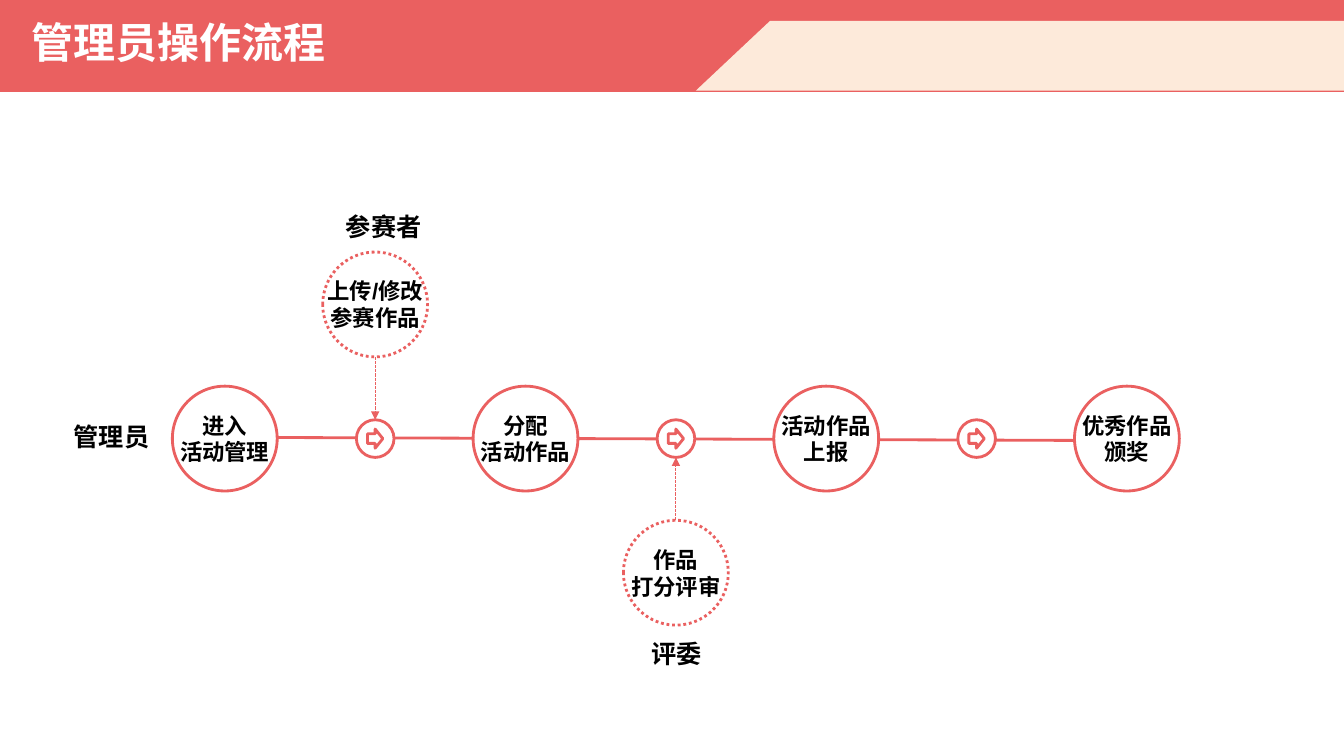
from dataclasses import dataclass

from lxml import etree
from pptx import Presentation
from pptx.dml.color import RGBColor
from pptx.enum import dml, lang, shapes, text
from pptx.oxml import ns
from pptx.util import Pt

CORAL = RGBColor(0xEA, 0x60, 0x60)
CREAM = RGBColor(0xFD, 0xEA, 0xDA)
WHITE = RGBColor(0xFF, 0xFF, 0xFF)
BLACK = RGBColor(0, 0, 0)

SLIDE_WIDTH, SLIDE_HEIGHT = 960, 540
HEADER_HEIGHT = 64.8
FLOW_Y = 313.3
FIRST_X = 160.6
PITCH = 214.8
STEP_SIZE = 74.9
MARKER_SIZE = 26.9
SIDE_OFFSET = 95.8
LABEL_WIDTH, LABEL_HEIGHT = 101.5, 29


@dataclass(frozen=True)
class SideTask:
    """A task of another role, which feeds into the marker after a step."""
    after_step: int
    direction: int  # -1 above the flow, 1 below it
    lines: tuple[str, ...]


@dataclass(frozen=True)
class RoleLabel:
    role: str
    center_x: float
    top: float


STEPS = [
    ("进入", "活动管理"),
    ("分配", "活动作品"),
    ("活动作品", "上报"),
    ("优秀作品", "颁奖"),
]
SIDE_TASKS = [
    SideTask(0, -1, ("上传/修改", "参赛作品")),
    SideTask(1, 1, ("作品", "打分评审")),
]
ROLE_LABELS = [
    RoleLabel("参赛者", 274, 147.6),
    RoleLabel("评委", 483.5, 452.2),
    RoleLabel("管理员", 79.6, 297.4),
]


def write_text(frame, lines, *, size, color=BLACK, font="Arial",
               align=text.PP_ALIGN.CENTER, anchor=text.MSO_ANCHOR.TOP,
               wrap=True, fit=text.MSO_AUTO_SIZE.NONE, spacing=None) -> None:
    frame.word_wrap = wrap
    frame.auto_size = fit
    frame.vertical_anchor = anchor
    for index, line in enumerate(lines):
        paragraph = frame.paragraphs[0] if index == 0 else frame.add_paragraph()
        paragraph.alignment = align
        paragraph.line_spacing = spacing
        run = paragraph.add_run()
        run.text = line
        run.font.size = Pt(size)
        run.font.name = font
        run.font.bold = True
        run.font.color.rgb = color
        run.font.language_id = lang.MSO_LANGUAGE_ID.SIMPLIFIED_CHINESE


def add_centered(slide, preset, x: float, y: float, width: float,
                 height: float, fill: RGBColor = WHITE, dash=None):
    """Add a coral-outlined shape around the point x, y."""
    outline = slide.shapes.add_shape(
        preset, Pt(x - width / 2), Pt(y - height / 2), Pt(width), Pt(height))
    outline.shadow.inherit = False
    outline.fill.solid()
    outline.fill.fore_color.rgb = fill
    outline.line.color.rgb = CORAL
    outline.line.width = Pt(2)
    if dash is not None:
        outline.line.dash_style = dash
    return outline


def add_line(slide, start: tuple[float, float], end: tuple[float, float],
             width: float, dashed_arrow: bool = False) -> None:
    line = slide.shapes.add_connector(
        shapes.MSO_CONNECTOR.STRAIGHT, *map(Pt, start + end))
    line.line.color.rgb = CORAL
    line.line.width = Pt(width)
    if dashed_arrow:
        line.line.dash_style = dml.MSO_LINE.SQUARE_DOT
        etree.SubElement(line.get_or_add_ln(), ns.qn("a:tailEnd"), type="triangle")
    etree.SubElement(line.element.spPr, ns.qn("a:effectLst"))


def add_header(slide) -> None:
    add_centered(slide, shapes.MSO_SHAPE.RECTANGLE, SLIDE_WIDTH / 2,
                 HEADER_HEIGHT / 2, SLIDE_WIDTH, HEADER_HEIGHT, CORAL)

    title = slide.shapes.title
    title.left, title.top = Pt(15.1), Pt(0)
    title.width, title.height = Pt(459.4), Pt(HEADER_HEIGHT)
    write_text(title.text_frame, ["管理员操作流程"], size=30, color=WHITE,
               font="Montserrat", align=text.PP_ALIGN.LEFT,
               anchor=text.MSO_ANCHOR.MIDDLE, spacing=0.9)
    title.element.getparent().append(title.element)  # in front of the band

    outline = slide.shapes.build_freeform(Pt(550), Pt(15), scale=1.0)
    outline.add_line_segments(
        [(Pt(SLIDE_WIDTH), Pt(15)), (Pt(SLIDE_WIDTH), Pt(HEADER_HEIGHT)),
         (Pt(497), Pt(HEADER_HEIGHT))])
    accent = outline.convert_to_shape()
    accent.shadow.inherit = False
    accent.fill.solid()
    accent.fill.fore_color.rgb = CREAM
    accent.line.fill.background()


def add_task(slide, x: float, y: float, lines: tuple[str, ...], dash=None) -> None:
    circle = add_centered(slide, shapes.MSO_SHAPE.OVAL, x, y,
                          STEP_SIZE, STEP_SIZE, dash=dash)
    write_text(circle.text_frame, lines, size=16, wrap=False,
               anchor=text.MSO_ANCHOR.MIDDLE)


def marker_x(after_step: int) -> float:
    return FIRST_X + (after_step + 0.5) * PITCH


def add_flow(slide) -> None:
    add_line(slide, (197.3, 312.5), (769, 314.6), 2)
    for index in range(len(STEPS) - 1):
        x = marker_x(index)
        add_centered(slide, shapes.MSO_SHAPE.OVAL, x, FLOW_Y,
                     MARKER_SIZE, MARKER_SIZE)
        add_centered(slide, shapes.MSO_SHAPE.RIGHT_ARROW, x, FLOW_Y, 11, 13.7)
    for index, lines in enumerate(STEPS):
        add_task(slide, FIRST_X + index * PITCH, FLOW_Y, lines)


def add_side_task(slide, task: SideTask) -> None:
    x = marker_x(task.after_step)
    y = FLOW_Y + task.direction * SIDE_OFFSET
    add_task(slide, x, y, task.lines, dml.MSO_LINE.ROUND_DOT)
    add_line(slide, (x, y - task.direction * STEP_SIZE / 2),
             (x, FLOW_Y + task.direction * MARKER_SIZE / 2), 0.75, True)


def add_role_label(slide, label: RoleLabel) -> None:
    box = slide.shapes.add_textbox(
        Pt(label.center_x - LABEL_WIDTH / 2), Pt(label.top),
        Pt(LABEL_WIDTH), Pt(LABEL_HEIGHT))
    write_text(box.text_frame, [label.role], size=18,
               fit=text.MSO_AUTO_SIZE.SHAPE_TO_FIT_TEXT)


def main() -> None:
    deck = Presentation()
    deck.slide_width, deck.slide_height = Pt(SLIDE_WIDTH), Pt(SLIDE_HEIGHT)
    slide = deck.slides.add_slide(deck.slide_layouts.get_by_name("Title Only"))
    add_header(slide)
    add_flow(slide)
    for task in SIDE_TASKS:
        add_side_task(slide, task)
    for label in ROLE_LABELS:
        add_role_label(slide, label)
    deck.save("out.pptx")


if __name__ == "__main__":
    main()
